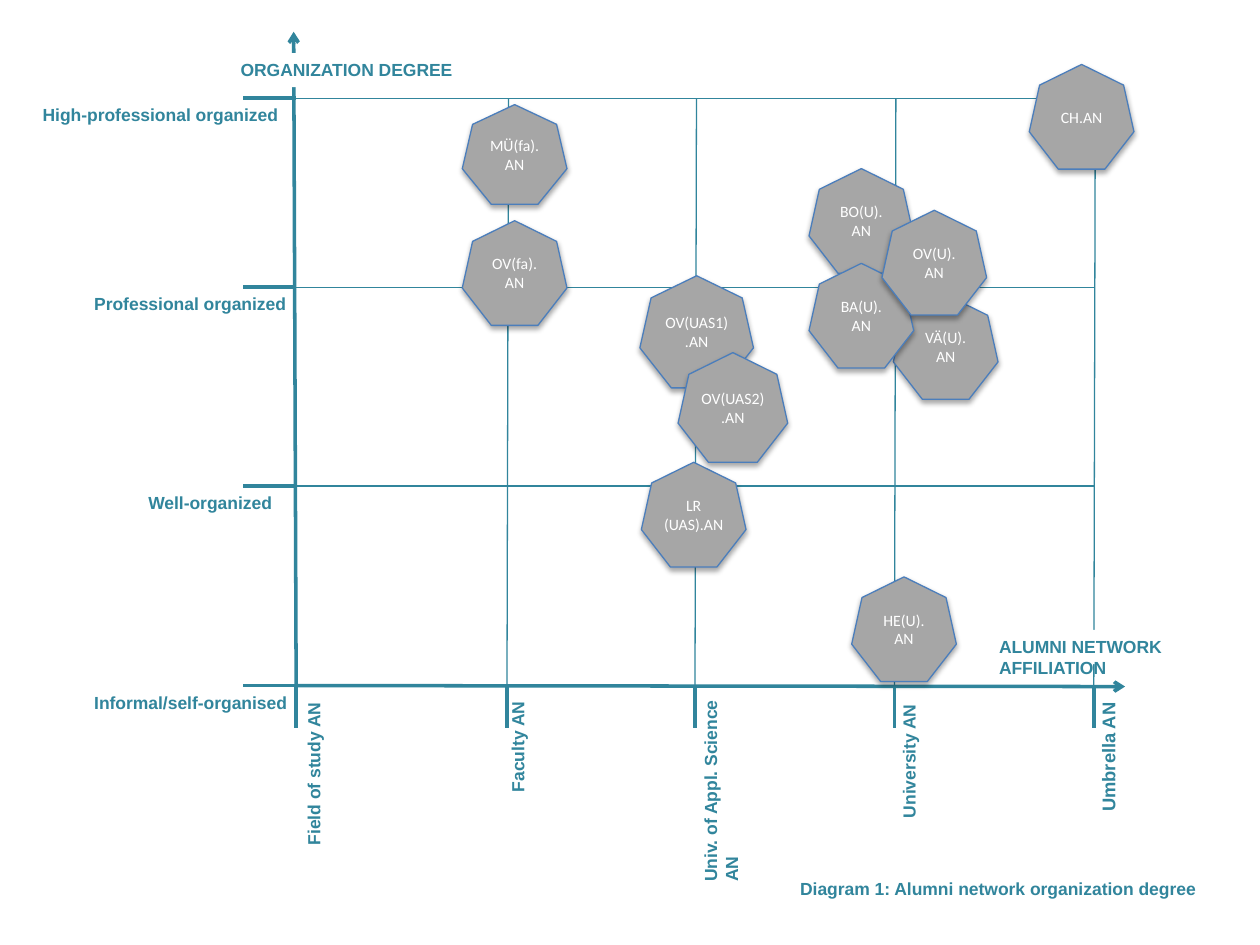
import lxml.etree
import pptx
import pptx.dml.color
import pptx.enum.dml
import pptx.enum.shapes
import pptx.enum.text
import pptx.oxml.ns
import pptx.util

Cm = pptx.util.Cm
Pt = pptx.util.Pt
RGBColor = pptx.dml.color.RGBColor
Shape = pptx.enum.shapes.MSO_SHAPE

TEAL = RGBColor(0x31, 0x85, 0x9C)
GRAY = RGBColor(0xA6, 0xA6, 0xA6)
BLUE = RGBColor(0x4B, 0x7E, 0xBC)
WHITE = RGBColor(0xFF, 0xFF, 0xFF)

AXIS_X, AXIS_Y = 5.97, 13.82
TICK_LEFT, TICK_BOTTOM = 4.9, 14.68
GRID_TOP, GRID_RIGHT = 1.98, 22.05
LABEL_HEIGHT = 0.69
NODE_SIZE = 2.11

# Row position, label, label left, label width
ROWS = [
    (1.98, "High-professional organized", 0.61, 5.82),
    (5.79, "Professional organized", 1.65, 4.98),
    (9.8, "Well-organized", 2.74, 3.18),
    (AXIS_Y, "Informal/self-organised", 1.65, 4.65),
]

# Column position, label, left and top before rotation, length, text size
COLUMNS = [
    (AXIS_X, "Field of study AN", 4.42, 15.04, 3.81, 10),
    (10.22, "Faculty AN", 9.12, 14.55, 2.64, 10),
    (14.01, "Univ. of Appl. Science AN", 12.09, 15.44, 4.47, 10),
    (18.03, "University AN", 16.84, 14.91, 2.97, 10),
    (GRID_RIGHT, "Umbrella AN", 20.85, 14.78, 2.97, 10.5),
]

# Label, left, top, then width and height where they differ from NODE_SIZE
NETWORKS = [
    ("MÜ(fa).\nAN", 9.32, 2.11, 2.11, 2.01),
    ("BO(U).\nAN", 16.31, 3.4),
    ("LR (UAS).AN", 12.93, 9.32),
    ("HE(U).\nAN", 17.17, 11.63),
    ("VÄ(U).\nAN", 18.01, 5.94),
    ("BA(U).\nAN", 16.31, 5.31),
    ("CH.AN", 20.75, 1.3),
    ("OV(U).\nAN", 17.78, 4.24),
    ("OV(fa).\nAN", 9.32, 4.45),
    ("OV(UAS1).AN", 12.9, 5.56, 2.29, 2.26),
    ("OV(UAS2).AN", 13.67, 7.11, 2.21, 2.21),
]


def add_child(parent, tag, **attributes):
    child = lxml.etree.SubElement(parent, pptx.oxml.ns.qn(tag))
    for name, value in attributes.items():
        child.set(name, str(value))
    return child


def add_line(page, start, end, width=2, arrow=False):
    line = page.shapes.add_connector(
        pptx.enum.shapes.MSO_CONNECTOR.STRAIGHT,
        Cm(start[0]), Cm(start[1]), Cm(end[0]), Cm(end[1]))
    line.line.color.rgb = TEAL
    line.line.width = Pt(width)
    if arrow:
        add_child(line.line._get_or_add_ln(), "a:tailEnd", type="arrow")
    add_child(line._element.spPr, "a:effectLst")


def write_text(shape, text, size=10, font="Arial", color=TEAL, bold=True,
               align=pptx.enum.text.PP_ALIGN.LEFT,
               anchor=pptx.enum.text.MSO_ANCHOR.TOP):
    frame = shape.text_frame
    frame.word_wrap = True
    frame.vertical_anchor = anchor
    frame.text = text
    for para in frame.paragraphs:
        para.alignment = align
        for span in para.runs:
            span.font.size = Pt(size)
            span.font.name = font
            span.font.bold = bold
            span.font.color.rgb = color


def add_label(page, text, left, top, width, size=10, rotation=0):
    box = page.shapes.add_textbox(Cm(left), Cm(top), Cm(width), Cm(LABEL_HEIGHT))
    box.rotation = rotation
    write_text(box, text, size=size)


def add_axis_title(page, text, left, top):
    """Add a title on a white plate that covers the lines behind it."""
    box = page.shapes.add_shape(
        Shape.RECTANGLE, Cm(left), Cm(top), Cm(5.51), Cm(LABEL_HEIGHT))
    box.shadow.inherit = False
    box.fill.solid()
    box.fill.fore_color.rgb = WHITE
    box.line.fill.background()
    write_text(box, text)


def add_shadow(shape):
    shape.shadow.inherit = False
    effects = shape._element.spPr.find(pptx.oxml.ns.qn("a:effectLst"))
    shadow = add_child(effects, "a:outerShdw", blurRad=Pt(3.1), dist=Pt(1.8),
                       dir=90 * 60000, rotWithShape=0)
    color = add_child(shadow, "a:srgbClr", val="000000")
    add_child(color, "a:alpha", val=35000)


def add_network(page, text, left, top, width=NODE_SIZE, height=NODE_SIZE):
    node = page.shapes.add_shape(
        Shape.HEPTAGON, Cm(left), Cm(top), Cm(width), Cm(height))
    node.fill.solid()
    node.fill.fore_color.rgb = GRAY
    node.line.color.rgb = BLUE
    node.line.width = Pt(0.75)
    add_shadow(node)
    write_text(node, text, size=9, font="Calibri", color=WHITE, bold=False,
               align=pptx.enum.text.PP_ALIGN.CENTER,
               anchor=pptx.enum.text.MSO_ANCHOR.MIDDLE)


def main():
    deck = pptx.Presentation()
    deck.slide_width, deck.slide_height = Cm(25.4), Cm(19.05)
    page = deck.slides.add_slide(deck.slide_layouts[6])

    add_line(page, (AXIS_X, AXIS_Y), (5.92, 0.64), arrow=True)
    add_line(page, (AXIS_X, AXIS_Y), (22.68, 13.84), arrow=True)

    for x, text, left, top, length, size in COLUMNS:
        add_line(page, (x, AXIS_Y), (x, TICK_BOTTOM))
        add_label(page, text, left, top, length, size=size, rotation=270)
        if x != AXIS_X:
            add_line(page, (x, 13.94), (x + 0.03, GRID_TOP), width=0.75)

    for y, text, left, width in ROWS:
        add_line(page, (TICK_LEFT, y), (AXIS_X, y))
        add_label(page, text, left, y, width)
        if y != AXIS_Y:
            add_line(page, (AXIS_X, y), (GRID_RIGHT, y), width=0.75)

    for network in NETWORKS:
        add_network(page, *network)

    add_axis_title(page, "ORGANIZATION DEGREE", 4.6, 1.07)
    add_axis_title(page, "ALUMNI NETWORK AFFILIATION", 19.89, 12.7)
    add_label(page, "Diagram 1: Alumni network organization degree",
              15.88, 17.58, 9.09)
    deck.save("out.pptx")


if __name__ == "__main__":
    main()
